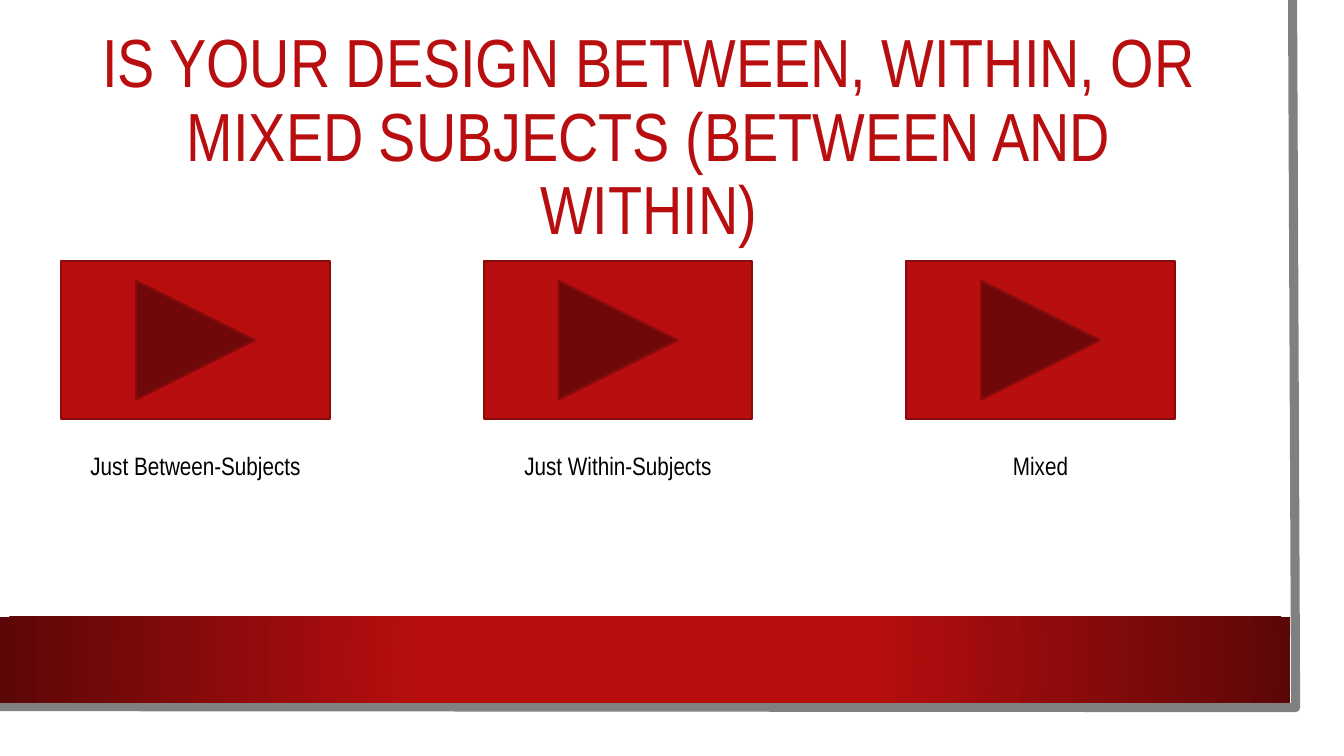
from dataclasses import dataclass

import lxml.etree
import pptx
import pptx.dml.color
import pptx.enum.shapes
import pptx.enum.text
import pptx.oxml
import pptx.oxml.ns
import pptx.util

EMU_PER_PX = 9144  # 100 px to the inch


@dataclass(frozen=True)
class Theme:
    font: str = "Arial Narrow"
    title_size: float = 48.6
    label_size: float = 18
    frame_width: float = 6.5
    button_line_width: float = 1.5
    paper: str = "FFFFFF"
    ink: str = "000000"
    red: str = "B80E0F"
    dark_red: str = "880A0B"
    deep_red: str = "5C0707"
    frame: str = "808080"


THEME = Theme()
SHAPES = pptx.enum.shapes.MSO_SHAPE


def px(length):
    return pptx.util.Emu(length * EMU_PER_PX)


def rgb(color):
    return pptx.dml.color.RGBColor.from_string(color)


def add_filled_shape(slide, preset, box, color):
    shape = slide.shapes.add_shape(preset, *map(px, box))
    shape.shadow.inherit = False
    shape.fill.solid()
    shape.fill.fore_color.rgb = rgb(color)
    shape.line.fill.background()
    return shape


def set_line(shape, color, width):
    shape.line.color.rgb = rgb(color)
    shape.line.width = pptx.util.Pt(width)


def add_centred_text(slide, box, text, size, color):
    text_box = slide.shapes.add_textbox(*map(px, box))
    text_box.text_frame.word_wrap = True
    text_box.text_frame.text = text
    paragraph = text_box.text_frame.paragraphs[0]
    paragraph.alignment = pptx.enum.text.PP_ALIGN.CENTER
    font = paragraph.runs[0].font
    font.name = THEME.font
    font.size = pptx.util.Pt(size)
    font.color.rgb = rgb(color)
    return text_box.text_frame


def fill_from_centre(shape, inner, outer):
    """Fill with a circular gradient that spreads from the shape's centre."""
    shape.fill.gradient()
    stops = zip(shape.fill.gradient_stops, ((0.34, inner), (1, outer)))
    for stop, (position, color) in stops:
        stop.position = position
        stop.color.rgb = rgb(color)
    linear = shape.element.spPr.find(".//" + pptx.oxml.ns.qn("a:lin"))
    circle = pptx.oxml.parse_xml(
        f'<a:path {pptx.oxml.ns.nsdecls("a")} path="circle">'
        '<a:fillToRect l="50000" t="50000" r="50000" b="50000"/></a:path>'
    )
    linear.getparent().replace(linear, circle)


def add_page(slide, box):
    """Draw the sheet, its grey lower-right edge and the red band."""
    left, top, width, height = box
    add_filled_shape(slide, SHAPES.RECTANGLE, box, THEME.paper)

    right, bottom = left + width - 25, top + height - 25
    edge = slide.shapes.build_freeform(right - 3, top, scale=EMU_PER_PX)
    edge.add_line_segments([(right, bottom), (left - 3, bottom - 1)], close=False)
    frame = edge.convert_to_shape()
    frame.shadow.inherit = False
    frame.fill.background()
    set_line(frame, THEME.frame, THEME.frame_width)

    band_box = (left, top + 612, width - 30, 85)
    band = add_filled_shape(slide, SHAPES.RECTANGLE, band_box, THEME.red)
    fill_from_centre(band, THEME.red, THEME.deep_red)


def add_title(slide, box, text):
    frame = add_centred_text(slide, box, text, THEME.title_size, THEME.red)
    frame.vertical_anchor = pptx.enum.text.MSO_ANCHOR.MIDDLE
    frame.paragraphs[0].line_spacing = 0.9


def add_choice(slide, box, label):
    """Draw a forward button with its label below."""
    left, top, width, height = box
    button_box = (left, top, width, 157)
    button = add_filled_shape(
        slide, SHAPES.ACTION_BUTTON_FORWARD_OR_NEXT, button_box, THEME.red
    )
    set_line(button, THEME.dark_red, THEME.button_line_width)
    label_box = (left, top + height - 40, width, 40)
    frame = add_centred_text(slide, label_box, label, THEME.label_size, THEME.ink)
    frame.auto_size = pptx.enum.text.MSO_AUTO_SIZE.SHAPE_TO_FIT_TEXT


def add_choices(slide, box, labels):
    left, top, width, height = box
    choice_width = 266
    pitch = (width - choice_width) // (len(labels) - 1)
    for column, label in enumerate(labels):
        add_choice(slide, (left + column * pitch, top, choice_width, height), label)


def main():
    presentation = pptx.Presentation()
    presentation.slide_width = px(1333)
    presentation.slide_height = px(750)
    slide = presentation.slides.add_slide(presentation.slide_layouts[6])

    add_page(slide, (0, 0, 1310, 727))
    add_title(
        slide,
        (75, 75, 1137, 126),
        "IS YOUR DESIGN BETWEEN, WITHIN, OR MIXED SUBJECTS (BETWEEN AND WITHIN)",
    )
    add_choices(
        slide,
        (61, 259, 1104, 223),
        ["Just Between-Subjects", "Just Within-Subjects", "Mixed"],
    )
    presentation.save("out.pptx")


if __name__ == "__main__":
    main()
